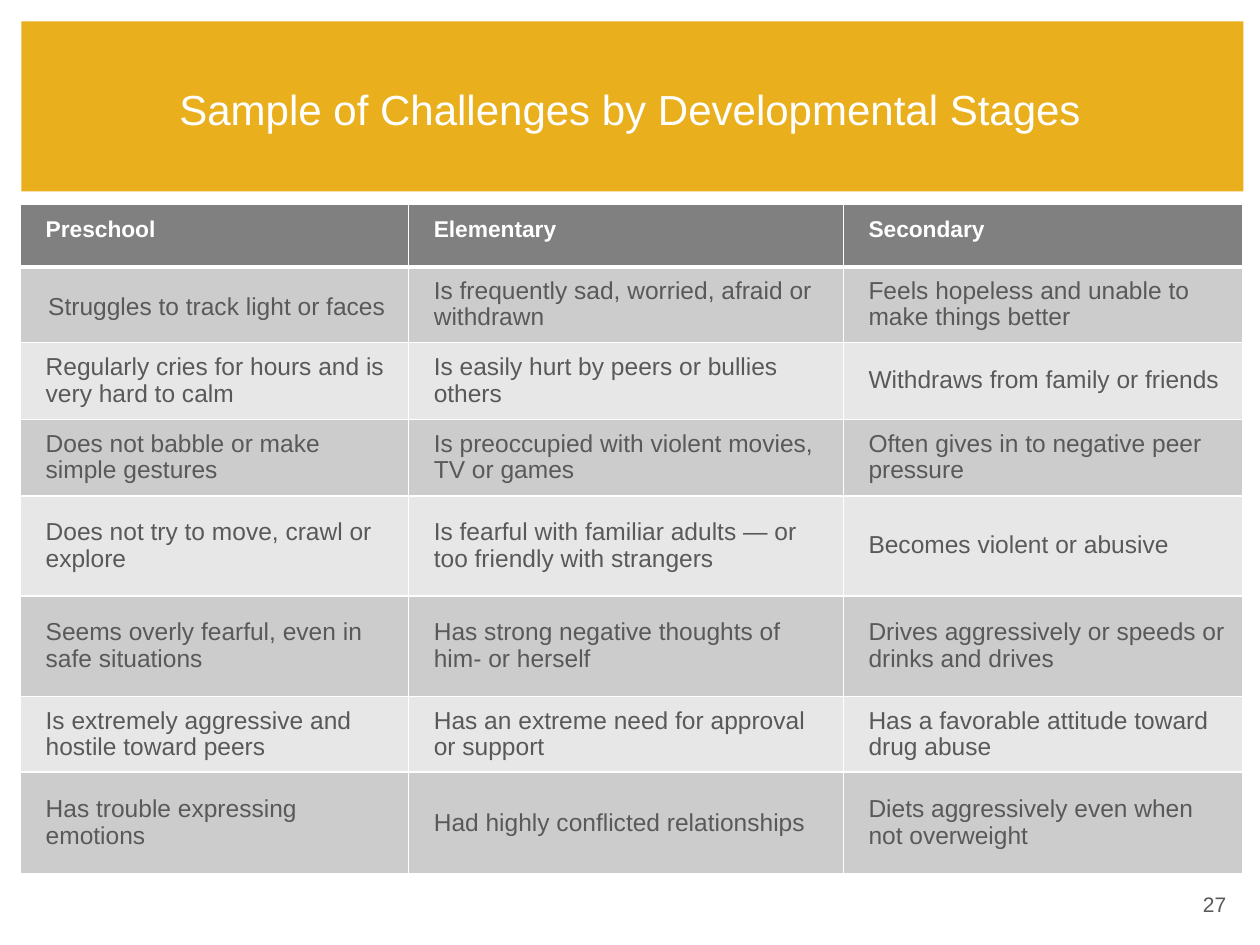
from dataclasses import dataclass

from lxml import etree
from pptx import Presentation
from pptx.dml.color import RGBColor
from pptx.enum import shapes, text
from pptx.oxml import ns
from pptx.util import Pt


@dataclass(frozen=True)
class Theme:
    font: str = "Arial"
    white: str = "FFFFFF"
    gold: str = "E9AF1D"
    header: str = "808080"
    bands: tuple = ("CCCCCC", "E7E7E7")
    ink: str = "595959"
    title_size: float = 24
    header_size: float = 13
    body_size: float = 14
    number_size: float = 12


THEME = Theme()

STAGES = ("Preschool", "Elementary", "Secondary")
CHALLENGES = (
    ("Struggles to track light or faces",
     "Is frequently sad, worried, afraid or withdrawn",
     "Feels hopeless and unable to make things better"),
    ("Regularly cries for hours and is very hard to calm",
     "Is easily hurt by peers or bullies others",
     "Withdraws from family or friends"),
    ("Does not babble or make simple gestures",
     "Is preoccupied with violent movies, TV or games",
     "Often gives in to negative peer pressure"),
    ("Does not try to move, crawl or explore",
     "Is fearful with familiar adults — or too friendly with strangers",
     "Becomes violent or abusive"),
    ("Seems overly fearful, even in safe situations",
     "Has strong negative thoughts of him- or herself",
     "Drives aggressively or speeds or drinks and drives"),
    ("Is extremely aggressive and hostile toward peers",
     "Has an extreme need for approval or support",
     "Has a favorable attitude toward drug abuse"),
    ("Has trouble expressing emotions",
     "Had highly conflicted relationships",
     "Diets aggressively even when not overweight"),
)
COLUMN_WIDTHS = (221.8, 248.4, 228.2)
ROW_HEIGHTS = (36, 43.2, 43.9, 43.9, 56.9, 57.6, 43.2, 58.3)


def set_format(target, values):
    for name, value in values.items():
        setattr(target, name, value)


def write(paragraph, words, size, color, bold=False, **layout):
    run = paragraph.add_run()
    run.text = words
    set_format(run.font, {"name": THEME.font, "size": Pt(size), "bold": bold})
    run.font.color.rgb = RGBColor.from_string(color)
    set_format(paragraph, layout)


def add_label(slide, box, words, size, color, alignment):
    frame = slide.shapes.add_textbox(*map(Pt, box)).text_frame
    set_format(frame, {"word_wrap": True,
                       "vertical_anchor": text.MSO_ANCHOR.MIDDLE})
    write(frame.paragraphs[0], words, size, color, alignment=alignment)


def add_title_band(slide, box):
    left, top, width, height = box
    band = slide.shapes.add_shape(shapes.MSO_SHAPE.RECTANGLE, *map(Pt, box))
    band.shadow.inherit = False
    band.fill.solid()
    band.fill.fore_color.rgb = RGBColor.from_string(THEME.gold)
    band.line.fill.background()
    title_box = (left + 23.8, top + 9.4, width - 50.4, height - 16.6)
    add_label(slide, title_box, "Sample of Challenges by Developmental Stages",
              THEME.title_size, THEME.white, text.PP_ALIGN.CENTER)


def add_borders(cell, widths):
    """Draw white borders; widths maps the sides L, R, T, B to points."""
    properties = cell._tc.get_or_add_tcPr()
    for side, width in widths.items():
        line = etree.SubElement(properties, ns.qn(f"a:ln{side}"), w=str(Pt(width)))
        fill = etree.SubElement(line, ns.qn("a:solidFill"))
        etree.SubElement(fill, ns.qn("a:srgbClr"), val=THEME.white)


def style_cell(cell, fill, inset, anchor, borders):
    add_borders(cell, borders)
    cell.fill.solid()
    cell.fill.fore_color.rgb = RGBColor.from_string(fill)
    set_format(cell, {"margin_left": Pt(14.4), "margin_right": Pt(7.2),
                      "margin_top": Pt(inset), "margin_bottom": Pt(inset),
                      "vertical_anchor": anchor})


def add_challenge_table(slide, box):
    frame = slide.shapes.add_table(len(ROW_HEIGHTS), len(STAGES), *map(Pt, box))
    table = frame.table
    for column, width in zip(table.columns, COLUMN_WIDTHS):
        column.width = Pt(width)
    for row, height in zip(table.rows, ROW_HEIGHTS):
        row.height = Pt(height)

    for column, stage in enumerate(STAGES):
        cell = table.cell(0, column)
        style_cell(cell, THEME.header, 7.2, text.MSO_ANCHOR.TOP,
                   {"L": 1, "R": 1, "T": 1, "B": 3})
        write(cell.text_frame.paragraphs[0], stage,
              THEME.header_size, THEME.white, bold=True)

    for row, challenges in enumerate(CHALLENGES, start=1):
        for column, challenge in enumerate(challenges):
            cell = table.cell(row, column)
            style_cell(cell, THEME.bands[(row - 1) % 2], 3.6,
                       text.MSO_ANCHOR.MIDDLE,
                       {"L": 1, "R": 1, "T": 3 if row == 1 else 1, "B": 1})
            write(cell.text_frame.paragraphs[0], challenge, THEME.body_size,
                  THEME.ink, line_spacing=Pt(15), space_after=Pt(8.7))

    first_challenge = table.cell(1, 0).text_frame.paragraphs[0]
    set_format(first_challenge, {"line_spacing": 1.15, "space_after": Pt(10)})
    first_challenge._p.get_or_add_pPr().set("marL", str(Pt(1.44)))


def main():
    deck = Presentation()
    set_format(deck, {"slide_width": Pt(720), "slide_height": Pt(540)})
    slide = deck.slides.add_slide(deck.slide_layouts[6])
    slide.background.fill.solid()
    slide.background.fill.fore_color.rgb = RGBColor.from_string(THEME.white)
    add_title_band(slide, (12.2, 12.2, 698.4, 97.2))
    add_label(slide, (540, 505.4, 167.8, 23), "27", THEME.number_size,
              THEME.ink, text.PP_ALIGN.RIGHT)
    add_challenge_table(slide, (11.7, 116.6, sum(COLUMN_WIDTHS), sum(ROW_HEIGHTS)))
    deck.save("out.pptx")


if __name__ == "__main__":
    main()
